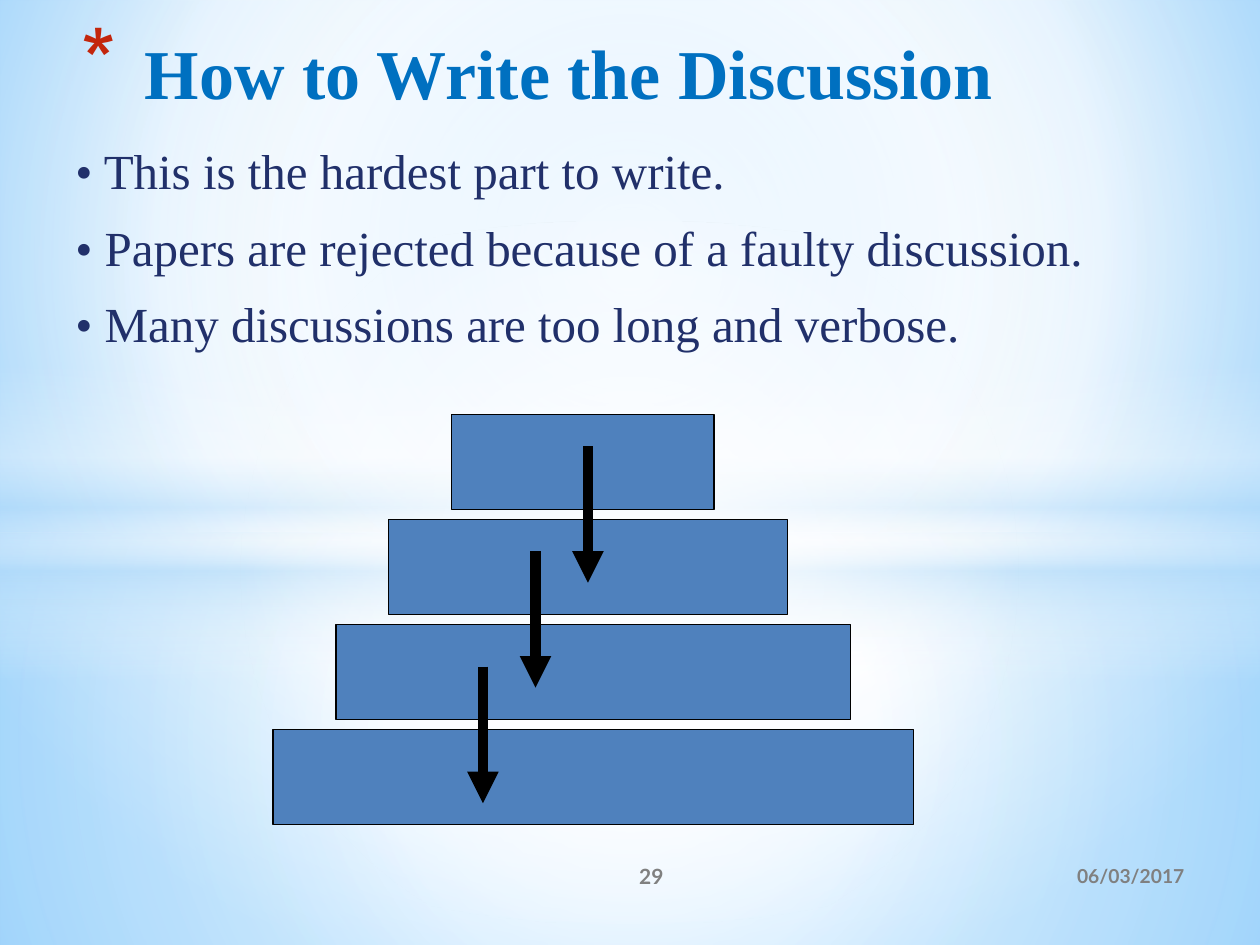
"""Build the slide on writing the discussion, with a stepped pyramid and arrows."""
from lxml.etree import SubElement
from pptx import Presentation
from pptx.dml.color import RGBColor
from pptx.enum.shapes import MSO_CONNECTOR, MSO_SHAPE
from pptx.enum.text import MSO_ANCHOR, PP_ALIGN
from pptx.oxml.ns import qn
from pptx.util import Inches, Pt

COLORS = {"title": "0070C0", "body": "21306A", "footer": "808080", "bullet": "C3260C",
          "bar": "4F81BD", "ink": "000000", "white": "FFFFFF", "sky": "B4DCFA",
          "pale": "9ED5FF", "deep": "5BB9FF"}
TITLE = "How to Write the Discussion"
POINTS = ["• This is the hardest part to write.",
          "• Papers are rejected because of a faulty discussion.",
          "• Many discussions are too long and verbose."]
FOOTERS = [("29", (4.17, 6.75, 2, 0.4), 12, PP_ALIGN.CENTER),
           ("06/03/2017", (6.75, 6.75, 2.75, 0.4), 11, PP_ALIGN.RIGHT)]

CENTER = (50, 50, 50, 50)
BACKGROUND = [(0, "pale", 100), (60, "white", 100), (100, "deep", 100)]
GLOWS = [
    (MSO_SHAPE.RECTANGLE, (0, 4.23, 10, 3.27), CENTER,
     [(0, "white", 91), (37, "white", 76), (100, "sky", 79)]),
    (MSO_SHAPE.RECTANGLE, (0, 0, 10, 4.23), CENTER,
     [(0, "white", 89), (48, "white", 62), (100, "sky", 79)]),
    (MSO_SHAPE.RECTANGLE, (0, 2.9, 10, 2.5), None,
     [(0, "white", 0), (29, "white", 30), (45, "sky", 40),
      (55, "white", 26), (65, "sky", 60), (100, "white", 0)]),
    (MSO_SHAPE.OVAL, (0, 1.75, 10, 5.58), CENTER,
     [(0, "white", 100), (54, "white", 0)]),
]

UNIT = 1 / 12
BAR_TOP, BAR_STEP, BAR_HEIGHT = 39.5, 10, 9
BARS = [(43, 25), (37, 38), (32, 49), (26, 61)]
ARROW_LENGTH = 13
ARROWS = [(56, 42.5), (51, 52.5), (46, 63.5)]


def color(name):
    return RGBColor.from_string(COLORS[name])


def box(*values):
    return [Inches(value) for value in values]


def grid(*values):
    return box(*(value * UNIT for value in values))


def apply_gradient(parent, stops, focus):
    """Replace the solid fill of a parent element by a gradient."""
    solid = parent.find(qn("a:solidFill"))
    gradient = parent.makeelement(qn("a:gradFill"), {"rotWithShape": "1"})
    parent.replace(solid, gradient)
    stop_list = SubElement(gradient, qn("a:gsLst"))
    for position, name, opacity in stops:
        stop = SubElement(stop_list, qn("a:gs"), pos=str(position * 1000))
        tint = SubElement(stop, qn("a:srgbClr"), val=COLORS[name])
        SubElement(tint, qn("a:alpha"), val=str(opacity * 1000))
    if focus:
        path = SubElement(gradient, qn("a:path"), {"path": "circle"})
        sides = {side: str(share * 1000) for side, share in zip("ltrb", focus)}
        SubElement(path, qn("a:fillToRect"), sides)
    else:
        SubElement(gradient, qn("a:lin"), ang="5400000", scaled="0")


def write(shape, lines, anchor, paragraph_format, font_format, color_name):
    frame = shape.text_frame
    frame.word_wrap = True
    frame.vertical_anchor = anchor
    frame.text = "\n".join(lines)
    for paragraph in frame.paragraphs:
        for name, value in paragraph_format.items():
            setattr(paragraph, name, value)
        font = paragraph.runs[0].font
        for name, value in font_format.items():
            setattr(font, name, value)
        font.color.rgb = color(color_name)


def add_block(slide, kind, area):
    shape = slide.shapes.add_shape(kind, *area)
    shape.shadow.inherit = False
    shape.fill.solid()
    return shape


def add_backdrop(slide):
    slide.background.fill.solid()
    properties = slide.background._cSld.find(qn("p:bg")).find(qn("p:bgPr"))
    apply_gradient(properties, BACKGROUND, (20, 10, 20, 60))
    for kind, area, focus, stops in GLOWS:
        glow = add_block(slide, kind, box(*area))
        glow.line.fill.background()
        apply_gradient(glow._element.spPr, stops, focus)


def add_title(slide):
    title = slide.shapes.title
    slide.shapes._spTree.append(title._element)
    title.left, title.top, title.width, title.height = box(0.35, 0.13, 7.85, 0.88)
    write(title, [TITLE], MSO_ANCHOR.MIDDLE, {"alignment": PP_ALIGN.LEFT},
          {"name": "Times New Roman", "size": Pt(40), "bold": True}, "title")
    properties = title.text_frame.paragraphs[0]._p.get_or_add_pPr()
    properties.set("marL", str(Inches(0.7)))
    properties.set("indent", str(Inches(-0.5)))
    bullet_color = SubElement(properties, qn("a:buClr"))
    SubElement(bullet_color, qn("a:srgbClr"), val=COLORS["bullet"])
    SubElement(properties, qn("a:buSzPct"), val="128000")
    SubElement(properties, qn("a:buChar"), char="*")


def add_texts(slide):
    body = slide.shapes.add_textbox(*box(0.5, 1.07, 8.74, 5.53))
    write(body, POINTS, MSO_ANCHOR.TOP, {"space_before": Pt(7), "space_after": Pt(3)},
          {"name": "Times New Roman", "size": Pt(28)}, "body")
    for text, area, size, alignment in FOOTERS:
        footer = slide.shapes.add_textbox(*box(*area))
        write(footer, [text], MSO_ANCHOR.MIDDLE, {"alignment": alignment},
              {"name": "Lato", "size": Pt(size), "bold": True}, "footer")


def add_pyramid(slide):
    for row, (left, width) in enumerate(BARS):
        top = BAR_TOP + row * BAR_STEP
        bar = add_block(slide, MSO_SHAPE.RECTANGLE, grid(left, top, width, BAR_HEIGHT))
        bar.fill.fore_color.rgb = color("bar")
        bar.line.color.rgb = color("ink")
        bar.line.width = Pt(0.75)
    for x, top in ARROWS:
        arrow = slide.shapes.add_connector(
            MSO_CONNECTOR.STRAIGHT, *grid(x, top, x, top + ARROW_LENGTH))
        arrow.line.color.rgb = color("ink")
        arrow.line.width = Pt(6)
        SubElement(arrow.line._get_or_add_ln(), qn("a:tailEnd"), type="triangle")
        SubElement(arrow._element.spPr, qn("a:effectLst"))


def main():
    presentation = Presentation()
    presentation.slide_width, presentation.slide_height = box(10, 7.5)
    slide = presentation.slides.add_slide(presentation.slide_layouts[5])
    add_backdrop(slide)
    add_texts(slide)
    add_title(slide)
    add_pyramid(slide)
    presentation.save("out.pptx")


if __name__ == "__main__":
    main()
